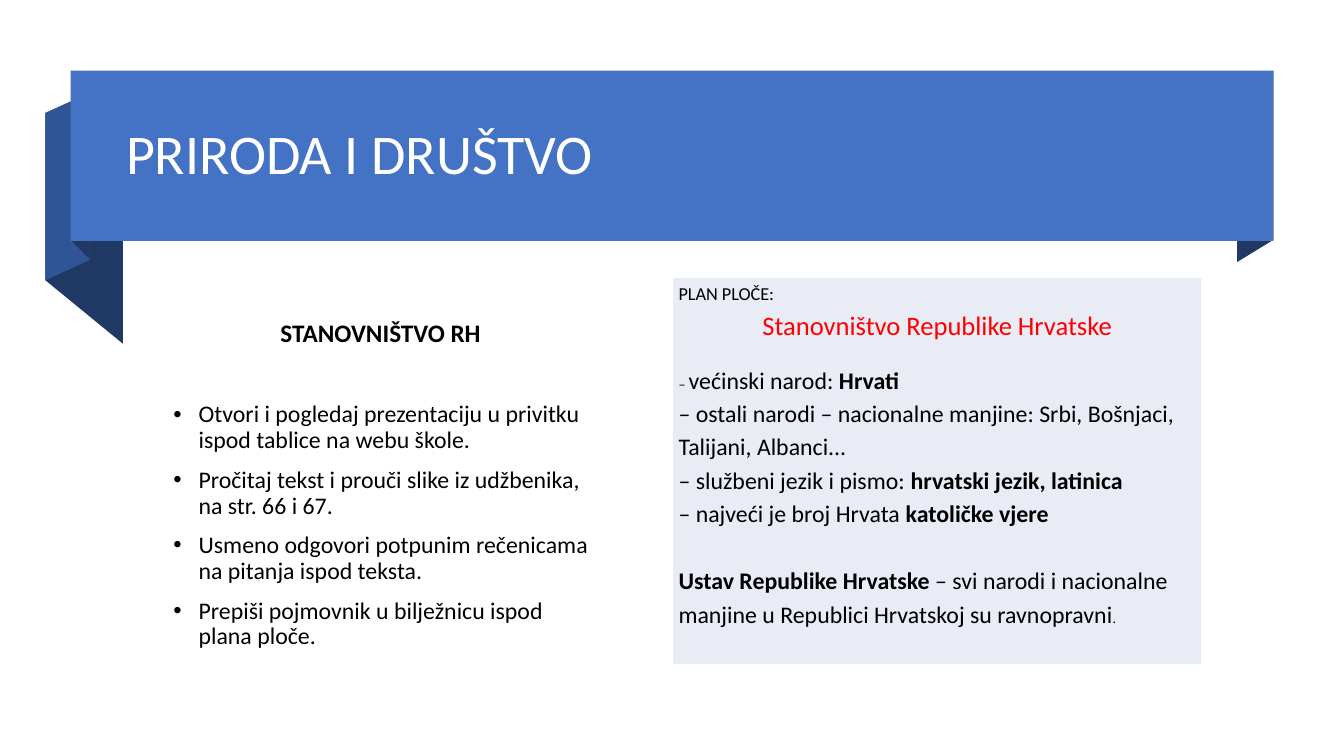
"""Build the lesson slide about the population of Croatia."""
from dataclasses import dataclass
from typing import Optional

from lxml import etree
from pptx import Presentation
from pptx.dml.color import RGBColor
from pptx.enum.shapes import MSO_SHAPE
from pptx.enum.text import MSO_ANCHOR, MSO_AUTO_SIZE, PP_ALIGN
from pptx.oxml.ns import qn
from pptx.util import Inches, Pt

RECTANGLE = MSO_SHAPE.RECTANGLE
LEFT, CENTER = PP_ALIGN.LEFT, PP_ALIGN.CENTER
TOP, MIDDLE = MSO_ANCHOR.TOP, MSO_ANCHOR.MIDDLE
NO_AUTOFIT = MSO_AUTO_SIZE.NONE

BLUE = RGBColor(0x44, 0x72, 0xC4)
MID_BLUE = RGBColor(0x2F, 0x55, 0x97)
NAVY = RGBColor(0x20, 0x38, 0x64)
PALE = RGBColor(0xE9, 0xEB, 0xF5)
RED = RGBColor(0xFF, 0x00, 0x00)
BLACK = RGBColor(0x00, 0x00, 0x00)
WHITE = RGBColor(0xFF, 0xFF, 0xFF)
FONT = "Calibri"


@dataclass(frozen=True)
class Span:
    text: str
    size: float = 17
    bold: bool = False
    color: RGBColor = BLACK


@dataclass(frozen=True)
class Para:
    spans: tuple[Span, ...]
    spacing: float = 1.15
    before: float = 0
    align: PP_ALIGN = LEFT
    bullet: Optional[str] = None


@dataclass(frozen=True)
class Fold:
    points: tuple[tuple[float, float], ...]
    color: RGBColor


FOLDS = (
    Fold(((12.63, 2.38), (12.27, 2.6), (12.27, 0.91), (12.63, 0.7)), NAVY),
    Fold(((1.22, 3.41), (0.45, 2.78), (0.45, 1.12), (1.22, 1.75)), NAVY),
    Fold(((0.89, 2.58), (0.45, 2.78), (0.45, 1.12), (0.89, 0.92)), MID_BLUE),
    Fold(((0.89, 2.57), (0.71, 2.39), (0.71, 0.7), (0.89, 0.89)), NAVY),
)
TITLE = (Para((Span("PRIRODA I DRUŠTVO", 40, color=WHITE),), 0.9),)
TASKS = (
    "Otvori i pogledaj prezentaciju u privitku ispod tablice na webu škole.",
    "Pročitaj tekst i prouči slike iz udžbenika, na str. 66 i 67.",
    "Usmeno odgovori potpunim rečenicama na pitanja ispod teksta.",
    "Prepiši pojmovnik u bilježnicu ispod plana ploče.",
)
LESSON = (
    Para((Span("STANOVNIŠTVO RH", 18, True),), 0.9, align=CENTER),
    *(Para((Span(task),), 0.9, 10 if index else 39, bullet="•")
      for index, task in enumerate(TASKS)),
)
BOARD = (
    Para((Span("PLAN PLOČE:", 13),), 1),
    Para((Span("Stanovništvo Republike Hrvatske", 19, color=RED),), align=CENTER),
    Para((Span("– ", 10), Span("većinski narod: "), Span("Hrvati", bold=True)), before=14),
    Para((Span("– ostali narodi – nacionalne manjine: Srbi, Bošnjaci, Talijani, Albanci..."),)),
    Para((Span("– službeni jezik i pismo: "), Span("hrvatski jezik, latinica", bold=True))),
    Para((Span("– najveći je broj Hrvata "), Span("katoličke vjere", bold=True))),
    Para((Span("Ustav Republike Hrvatske ", bold=True),
          Span("– svi narodi i nacionalne manjine u Republici Hrvatskoj su ravnopravni"),
          Span(".", 10)), before=24),
)


def paint(shape, color: RGBColor) -> None:
    """Give a shape a flat fill without line or shadow."""
    shape.fill.solid()
    shape.fill.fore_color.rgb = color
    shape.line.fill.background()
    shape.shadow.inherit = False


def set_bullet(paragraph, bullet: Optional[str]) -> None:
    """Set a hanging bullet, or remove the inherited one."""
    properties = paragraph._p.get_or_add_pPr()
    properties.set("marL", str(Inches(0.31) if bullet else 0))
    properties.set("indent", str(Inches(-0.25) if bullet else 0))
    if bullet:
        etree.SubElement(properties, qn("a:buFont"), typeface="Arial")
        etree.SubElement(properties, qn("a:buChar"), char=bullet)
    else:
        etree.SubElement(properties, qn("a:buNone"))


def write(frame, paras: tuple[Para, ...]) -> None:
    """Fill a text frame paragraph by paragraph and run by run."""
    frame.word_wrap = True
    for index, para in enumerate(paras):
        paragraph = frame.add_paragraph() if index else frame.paragraphs[0]
        paragraph.alignment = para.align
        paragraph.line_spacing = para.spacing
        paragraph.space_before = Pt(para.before)
        paragraph.space_after = Pt(0)
        set_bullet(paragraph, para.bullet)
        for span in para.spans:
            run = paragraph.add_run()
            run.text = span.text
            run.font.name = FONT
            run.font.size = Pt(span.size)
            run.font.bold = span.bold
            run.font.color.rgb = span.color


def draw_ribbon(page) -> None:
    """Draw the folded ribbon behind the title."""
    for fold in FOLDS:
        corners = [(Inches(x), Inches(y)) for x, y in fold.points]
        builder = page.shapes.build_freeform(*corners[0])
        builder.add_line_segments(corners[1:], close=True)
        paint(builder.convert_to_shape(), fold.color)
    band = page.shapes.add_shape(
        RECTANGLE, Inches(0.7), Inches(0.7), Inches(11.93), Inches(1.69))
    paint(band, BLUE)


def fill_placeholder(page, holder, box: tuple[float, ...], anchor: MSO_ANCHOR,
                     margin_top: float, paras: tuple[Para, ...]) -> None:
    """Move a placeholder to the front, place it and write its text."""
    page.shapes.element.append(holder.element)
    holder.left, holder.top, holder.width, holder.height = map(Inches, box)
    frame = holder.text_frame
    frame.auto_size = NO_AUTOFIT
    frame.vertical_anchor = anchor
    frame.margin_top = Inches(margin_top)
    write(frame, paras)


def draw_board(page) -> None:
    """Draw the one-cell table with the blackboard plan."""
    table = page.shapes.add_table(
        1, 1, Inches(6.67), Inches(2.75), Inches(5.25), Inches(3.84)).table
    table.first_row = table.horz_banding = False
    cell = table.cell(0, 0)
    cell.fill.solid()
    cell.fill.fore_color.rgb = PALE
    cell.margin_left = cell.margin_right = Inches(0.06)
    cell.margin_top = cell.margin_bottom = Inches(0.06)
    write(cell.text_frame, BOARD)


def main() -> None:
    """Build and save the deck."""
    deck = Presentation()
    deck.slide_width, deck.slide_height = Inches(13.33), Inches(7.5)
    page = deck.slides.add_slide(deck.slide_layouts[1])
    title, body = page.shapes.title, page.placeholders[1]
    draw_ribbon(page)
    fill_placeholder(page, title, (1.15, 0.83, 11.27, 1.45), MIDDLE, 0.05, TITLE)
    fill_placeholder(page, body, (1.56, 2.73, 4.43, 3.9), TOP, 0.45, LESSON)
    draw_board(page)
    deck.save("out.pptx")


if __name__ == "__main__":
    main()
